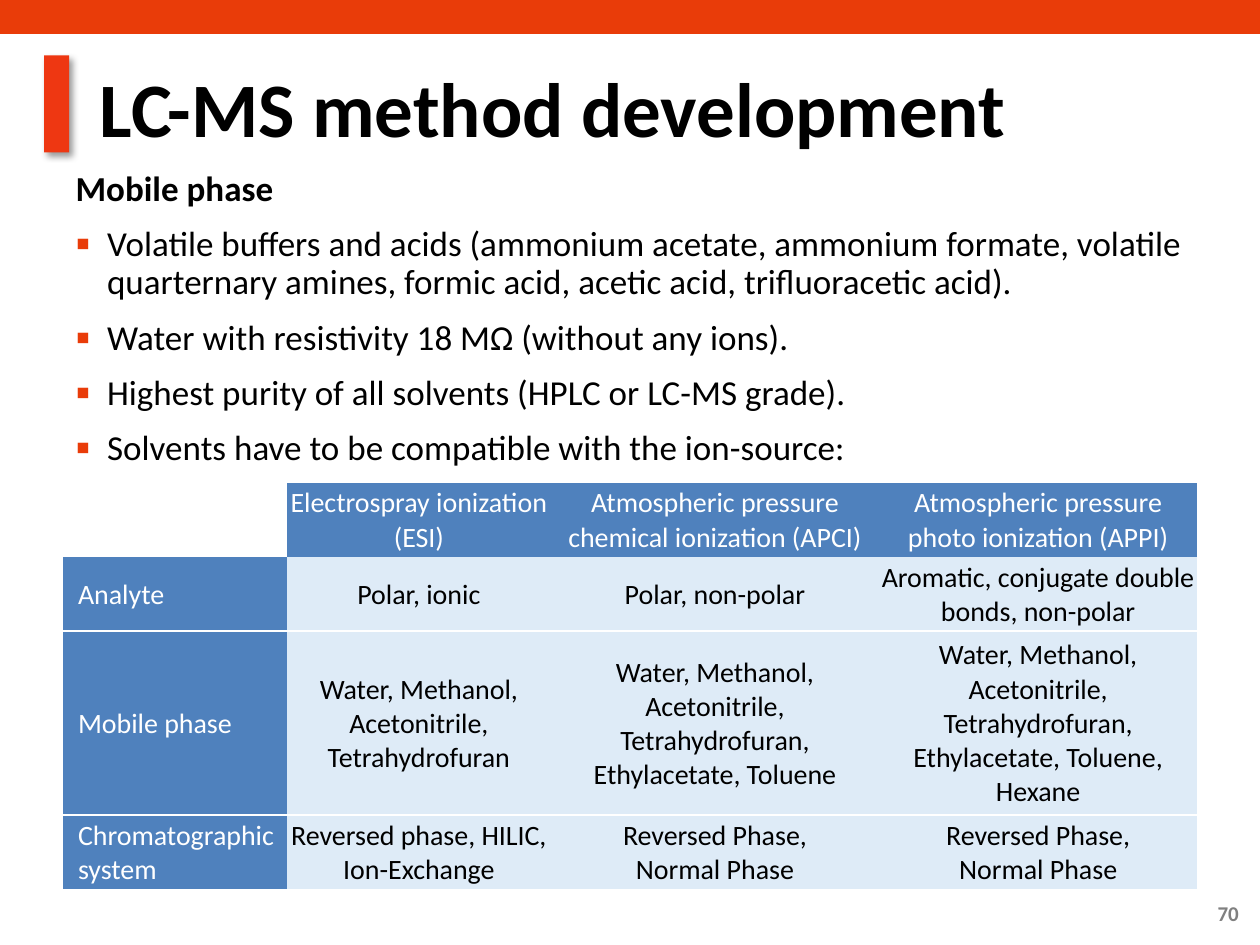
from lxml.etree import SubElement
from pptx import Presentation
from pptx.dml.color import RGBColor
from pptx.enum.shapes import MSO_SHAPE as Preset
from pptx.enum.text import MSO_ANCHOR as Anchor, MSO_AUTO_SIZE as AutoSize, PP_ALIGN as Align
from pptx.oxml.ns import qn
from pptx.util import Emu, Inches, Pt

BLACK = RGBColor(0x00, 0x00, 0x00)
WHITE = RGBColor(0xFF, 0xFF, 0xFF)
GRAY = RGBColor(0x80, 0x80, 0x80)
ORANGE = RGBColor(0xE9, 0x3C, 0x09)
RED = RGBColor(0xEE, 0x37, 0x12)
BLUE = RGBColor(0x4F, 0x81, 0xBD)
PALE_BLUE = RGBColor(0xDE, 0xEB, 0xF7)
PLAIN_TABLE = "{2D5ABB26-0587-4C30-8999-92F81FD0307C}"
COLUMNS, ROWS = 100, 75

SOLVENT_RULES = [
    "Volatile buffers and acids (ammonium acetate, ammonium formate, volatile "
    "quarternary amines, formic acid, acetic acid, trifluoracetic acid).",
    "Water with resistivity 18 MΩ (without any ions).",
    "Highest purity of all solvents (HPLC or LC-MS grade).",
    "Solvents have to be compatible with the ion-source:",
]
ION_SOURCES = [
    ["", "Electrospray ionization (ESI)", "Atmospheric pressure chemical ionization (APCI)",
     "Atmospheric pressure photo ionization (APPI)"],
    ["Analyte", "Polar, ionic", "Polar, non-polar",
     "Aromatic, conjugate double bonds, non-polar"],
    ["Mobile phase", "Water, Methanol, Acetonitrile, Tetrahydrofuran",
     "Water, Methanol, Acetonitrile, Tetrahydrofuran, Ethylacetate, Toluene",
     "Water, Methanol, Acetonitrile, Tetrahydrofuran, Ethylacetate, Toluene, Hexane"],
    ["Chromatographic system", "Reversed phase, HILIC, Ion-Exchange",
     "Reversed Phase,\nNormal Phase", "Reversed Phase,\nNormal Phase"],
]


def add_xml(parent, tag, **attributes):
    return SubElement(parent, qn(tag), {key: str(value) for key, value in attributes.items()})


class SlideBuilder:
    """Holds the style and the current slide, placed on a 100 by 75 grid."""

    font = "Calibri"

    def __init__(self, deck):
        self.slide = deck.slides.add_slide(deck.slide_layouts[1])
        self.column = deck.slide_width / COLUMNS
        self.row = deck.slide_height / ROWS

    def box(self, left, top, width, height):
        return [Emu(round(share * unit)) for share, unit in
                zip((left, top, width, height), (self.column, self.row) * 2)]

    def place(self, placeholder, area):
        (placeholder.left, placeholder.top,
         placeholder.width, placeholder.height) = self.box(*area)
        placeholder.text_frame.auto_size = AutoSize.NONE
        placeholder.text_frame.word_wrap = True
        return placeholder.text_frame

    def style(self, paragraph, size, color, bold=False, align=Align.LEFT):
        paragraph.alignment = align
        for run in paragraph.runs:
            run.font.name, run.font.size, run.font.bold = self.font, Pt(size), bold
            run.font.color.rgb = color

    def bar(self, area, color, shadow=False):
        bar = self.slide.shapes.add_shape(Preset.RECTANGLE, *self.box(*area))
        bar.fill.solid()
        bar.fill.fore_color.rgb = color
        bar.line.fill.background()
        bar.shadow.inherit = False
        if shadow:
            effects = bar._element.spPr.find(qn("a:effectLst"))
            outer = add_xml(effects, "a:outerShdw", blurRad=Pt(4), dist=Pt(3),
                            dir=45 * 60000, algn="tl", rotWithShape=0)
            add_xml(add_xml(outer, "a:srgbClr", val=BLACK), "a:alpha", val=40000)

    def title(self, text, area):
        frame = self.place(self.slide.shapes.title, area)
        frame.text = text
        frame.vertical_anchor = Anchor.MIDDLE
        frame.paragraphs[0].line_spacing = 0.9
        self.style(frame.paragraphs[0], 44, BLACK, bold=True)

    def bullet_list(self, heading, items, area):
        frame = self.place(self.slide.placeholders[1], area)
        frame.text = "\n".join([heading, *items])
        for index, paragraph in enumerate(frame.paragraphs):
            paragraph.line_spacing = 0.9
            paragraph.space_before = Pt(10 if index else 0)
            self.style(paragraph, 20, BLACK, bold=index == 0)
            properties = paragraph._p.get_or_add_pPr()
            properties.set("marL", str(Inches(0.25)))
            properties.set("indent", str(-Inches(0.25)))
            if index:
                add_xml(add_xml(properties, "a:buClr"), "a:srgbClr", val=ORANGE)
                add_xml(properties, "a:buSzPct", val=120000)
                add_xml(properties, "a:buFont", typeface="Arial")
                add_xml(properties, "a:buChar", char="▪")
            else:
                add_xml(properties, "a:buNone")

    def page_number(self, number, area):
        frame = self.slide.shapes.add_textbox(*self.box(*area)).text_frame
        frame.word_wrap = True
        frame.vertical_anchor = Anchor.MIDDLE
        frame.text = number
        self.style(frame.paragraphs[0], 12, GRAY, bold=True, align=Align.RIGHT)

    def rule(self, cell, edge):
        line = add_xml(cell._tc.get_or_add_tcPr(), edge, w=Pt(1))
        add_xml(add_xml(line, "a:solidFill"), "a:srgbClr", val=WHITE)

    def cell(self, cell, text, is_header, is_label):
        cell.text = text
        cell.vertical_anchor = Anchor.MIDDLE
        cell.margin_left = Inches(0.12 if is_label else 0.01)
        cell.margin_top = cell.margin_right = Inches(0.01)
        cell.margin_bottom = 0
        if not text:
            cell.fill.background()
            return
        dark = is_header or is_label
        cell.fill.solid()
        cell.fill.fore_color.rgb = BLUE if dark else PALE_BLUE
        for paragraph in cell.text_frame.paragraphs:
            self.style(paragraph, 16, WHITE if dark else BLACK,
                       align=Align.LEFT if is_label else Align.CENTER)

    def table(self, contents, area, widths, heights):
        frame = self.slide.shapes.add_table(len(heights), len(widths), *self.box(*area))
        table = frame.table
        table.first_row = table.horz_banding = False
        table._tbl.tblPr.find(qn("a:tableStyleId")).text = PLAIN_TABLE
        for column, width in zip(table.columns, widths):
            column.width = Emu(round(width * self.column))
        for row, height in zip(table.rows, heights):
            row.height = Emu(round(height * self.row))
        last = len(heights) - 1
        for r, texts in enumerate(contents):
            for c, text in enumerate(texts):
                cell = table.cell(r, c)
                if r > 1:
                    self.rule(cell, "a:lnT")
                if 0 < r < last:
                    self.rule(cell, "a:lnB")
                self.cell(cell, text, is_header=r == 0, is_label=c == 0)


def main():
    deck = Presentation()
    deck.slide_width, deck.slide_height = Inches(10), Inches(7.5)
    page = SlideBuilder(deck)
    page.bar((0, 0, COLUMNS, 2.7), ORANGE)
    page.bar((3.5, 4.4, 2, 7.7), RED, shadow=True)
    page.page_number("70", (92.5, 70.5, 6.8, 4))
    page.title("LC-MS method development", (6.9, 4, 90.5, 9.8))
    page.bullet_list("Mobile phase", SOLVENT_RULES, (5, 13.1, 90, 25.2))
    page.table(ION_SOURCES, (5, 38.3, 90, 32.3),
               widths=(17.8, 20.9, 26.1, 25.2), heights=(5.9, 5.9, 14.6, 5.9))
    deck.save("out.pptx")


if __name__ == "__main__":
    main()
